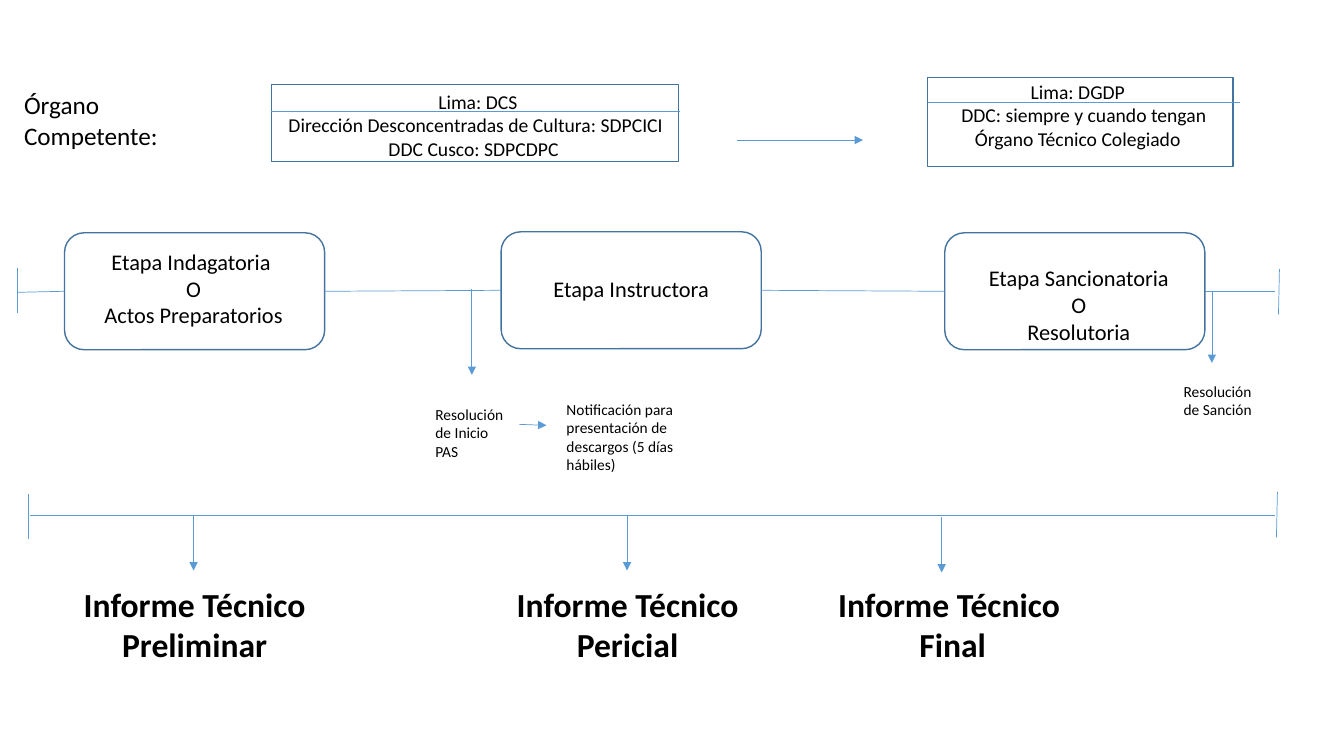
"""Build the slide on the stages, competent bodies and reports of a sanctioning procedure."""
from lxml.etree import SubElement
from pptx import Presentation
from pptx.dml.color import RGBColor
from pptx.enum.shapes import MSO_CONNECTOR, MSO_SHAPE
from pptx.enum.text import MSO_AUTO_SIZE, PP_ALIGN
from pptx.oxml.ns import qn
from pptx.util import Inches, Pt

FONT, INK, OUTLINE, LINE = "Calibri", "000000", "43739E", "5B9BD5"
TOP, LEFT, BOTTOM, RIGHT = range(4)

STAGE_SIZE = (2.58, 1.16)
STAGES = [(0.64, 2.31), (4.97, 2.3), (9.37, 2.31)]
BODIES = [(2.69, 0.84, 4.04, 0.76), (9.2, 0.77, 3.03, 0.88)]

FORMATS = {
    "stage": {"size": Pt(16)},
    "body": {"size": Pt(14)},
    "step": {"size": Pt(11)},
    "report": {"size": Pt(24), "bold": True},
    "heading": {"size": Pt(18)},
}
LEFT_ALIGNED = ("step", "heading")

TEXTS = [
    ("stage", (0.63, 2.41, 2.58, 0.91), ["Etapa Indagatoria ", "O", "Actos Preparatorios"]),
    ("stage", (4.97, 2.68, 2.58, 0.37), ["Etapa Instructora"]),
    ("stage", (9.41, 2.57, 2.58, 0.91), ["Etapa Sancionatoria", "O", "Resolutoria"]),
    ("body", (2.55, 0.84, 4.34, 1.04),
     ["Lima: DCS", "Dirección Desconcentradas de Cultura: SDPCICI", "DDC Cusco: SDPCDPC "]),
    ("body", (9.03, 0.74, 3.32, 0.81),
     ["Lima: DGDP", "DDC: siempre y cuando tengan Órgano Técnico Colegiado"]),
    ("step", (4.22, 3.97, 0.93, 0.66), ["Resolución de Inicio PAS"]),
    ("step", (11.64, 3.74, 1.01, 0.47), ["Resolución de Sanción"]),
    ("step", (5.52, 3.92, 1.72, 0.84),
     ["Notificación para presentación de descargos (5 días hábiles)"]),
    ("report", (0.47, 5.74, 2.92, 0.91), ["Informe Técnico Preliminar"]),
    ("report", (4.91, 5.74, 2.63, 0.91), ["Informe Técnico Pericial"]),
    ("report", (6.6, 5.74, 5.7, 0.91), ["Informe Técnico ", "Final"]),
    ("heading", (0.14, 0.84, 1.55, 0.71), ["Órgano Competente:"]),
]
FIRST_LINE_INDENTS = {
    "Lima: DCS": 0.04,
    "DDC: siempre y cuando tengan Órgano Técnico Colegiado": 0.12,
}

STAGE_LINKS = [
    ((0.17, 2.9), (0.64, 2.89), None, 0),
    ((3.22, 2.89), (4.97, 2.88), 0, 1),
    ((7.55, 2.88), (9.37, 2.89), 1, 2),
    ((11.95, 2.89), (12.65, 2.89), 2, None),
]
RULES = [
    ((0.3, 5.11), (12.65, 5.11)),
    ((2.69, 1.1), (6.74, 1.1)),
    ((9.2, 1.02), (12.3, 1.02)),
]
END_TICK = 0.45
END_TICKS = [(0.17, 2.66, 0), (12.69, 2.67, -0.01), (0.28, 4.9, 0), (12.67, 4.88, -0.01)]
REPORT_DROP = 0.55
REPORT_ARROWS = [(1.92, 5.11), (6.22, 5.11), (9.34, 5.13)]
ARROWS = [
    ((4.68, 2.87), (4.68, 3.72)),
    ((12.02, 2.9), (12.02, 3.6)),
    ((5.15, 4.21), (5.42, 4.22)),
    ((7.31, 1.39), (8.56, 1.39)),
]


def paint(color, value):
    color.rgb = RGBColor.from_string(value)


def add_frame(slide, preset, box):
    frame = slide.shapes.add_shape(preset, *map(Inches, box))
    frame.shadow.inherit = False
    frame.fill.background()
    frame.line.width = Pt(1)
    paint(frame.line.color, OUTLINE)
    return frame


def add_label(slide, role, box, lines):
    label = slide.shapes.add_textbox(*map(Inches, box)).text_frame
    label.word_wrap = True
    label.auto_size = MSO_AUTO_SIZE.SHAPE_TO_FIT_TEXT
    label.text = "\n".join(lines)
    for paragraph in label.paragraphs:
        paragraph.alignment = PP_ALIGN.LEFT if role in LEFT_ALIGNED else PP_ALIGN.CENTER
        indent = FIRST_LINE_INDENTS.get(paragraph.text)
        if indent:
            paragraph._p.get_or_add_pPr().set("indent", str(Inches(indent)))
        font = paragraph.runs[0].font
        for attribute, value in {"name": FONT, **FORMATS[role]}.items():
            setattr(font, attribute, value)
        paint(font.color, INK)


def add_line(slide, start, end, arrow=False):
    line = slide.shapes.add_connector(MSO_CONNECTOR.STRAIGHT, *map(Inches, start + end))
    line.line.width = Pt(0.5)
    paint(line.line.color, LINE)
    if arrow:
        SubElement(line.line._get_or_add_ln(), qn("a:tailEnd"), type="triangle")
    SubElement(line._element.spPr, qn("a:effectLst"))
    return line


def main():
    deck = Presentation()
    deck.slide_width, deck.slide_height = Inches(13.33), Inches(7.5)
    slide = deck.slides.add_slide(deck.slide_layouts[6])

    stages = [add_frame(slide, MSO_SHAPE.ROUNDED_RECTANGLE, corner + STAGE_SIZE)
              for corner in STAGES]
    for box in BODIES:
        add_frame(slide, MSO_SHAPE.RECTANGLE, box)
    for role, box, lines in TEXTS:
        add_label(slide, role, box, lines)

    for start, end, source, target in STAGE_LINKS:
        link = add_line(slide, start, end)
        if source is not None:
            link.begin_connect(stages[source], RIGHT)
        if target is not None:
            link.end_connect(stages[target], LEFT)
    for start, end in RULES:
        add_line(slide, start, end)
    for x, y, lean in END_TICKS:
        add_line(slide, (x, y), (x + lean, y + END_TICK))
    drops = [((x, y), (x, y + REPORT_DROP)) for x, y in REPORT_ARROWS]
    for start, end in ARROWS + drops:
        add_line(slide, start, end, arrow=True)

    deck.save("out.pptx")


if __name__ == "__main__":
    main()
